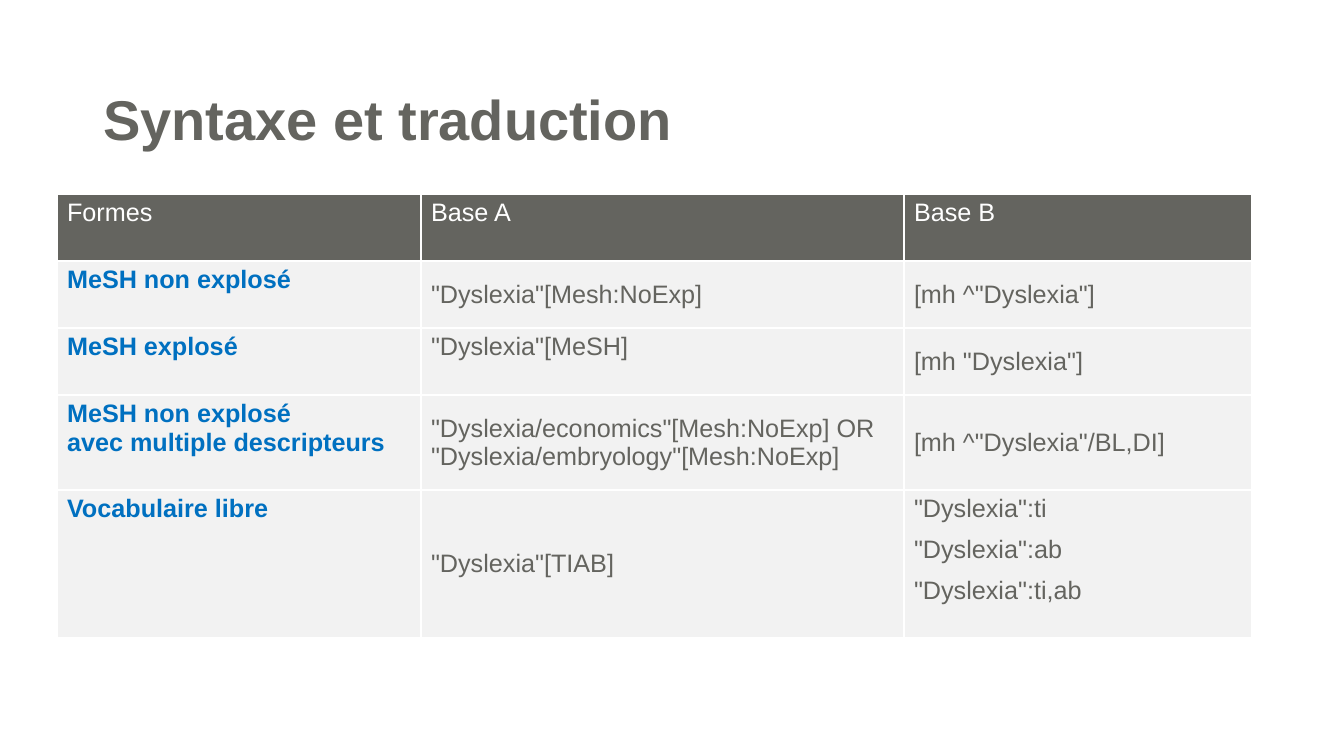
from lxml.etree import SubElement
from pptx import Presentation
from pptx.dml.color import RGBColor
from pptx.enum.text import MSO_ANCHOR as Anchor, PP_ALIGN as Align
from pptx.oxml import parse_xml
from pptx.oxml.ns import nsdecls
from pptx.util import Emu, Pt

GREY, BLUE, PALE, WHITE = "64645F", "0070C0", "F2F2F2", "FFFFFF"


def px(n):
    return Emu(round(n * 914400 / 100.8))


def style(para, size, color, bold):
    font = para.font
    font.name, font.size, font.bold = "Arial", Pt(size), bold
    font.color.rgb = RGBColor.from_string(color)


deck = Presentation()
deck.slide_width, deck.slide_height = px(1344), px(756)
slide = deck.slides.add_slide(deck.slide_layouts[5])

# Title
title = slide.shapes.title
title.left, title.top, title.width, title.height = px(93), px(88), px(1159), px(69)
title.text_frame.text = "Syntaxe et traduction"
title.text_frame.vertical_anchor = Anchor.MIDDLE
head = title.text_frame.paragraphs[0]
head.alignment, head.line_spacing = Align.LEFT, 0.9
style(head, 40, GREY, True)

# Table content
rows = [
    ("Formes", "Base A", "Base B"),
    ("MeSH non explosé", '"Dyslexia"[Mesh:NoExp]', '[mh ^"Dyslexia"]'),
    ("MeSH explosé", '"Dyslexia"[MeSH]', '[mh "Dyslexia"]'),
    ("MeSH non explosé\navec multiple descripteurs",
     '"Dyslexia/economics"[Mesh:NoExp] OR "Dyslexia/embryology"[Mesh:NoExp]',
     '[mh ^"Dyslexia"/BL,DI]'),
    ("Vocabulaire libre", '"Dyslexia"[TIAB]',
     '"Dyslexia":ti\n"Dyslexia":ab\n"Dyslexia":ti,ab'),
]
wide = [364, 483, 348]
high = [67, 67, 67, 95, 148]
tops = [(2, 1), (4, 2)]  # body cells whose text starts at the top

# Table grid
frame = slide.shapes.add_table(len(rows), len(wide), px(57), px(194),
                               px(sum(wide)), px(sum(high)))
table = frame.table
table.horz_banding = False
for col, w in zip(table.columns, wide):
    col.width = px(w)
for row, h in zip(table.rows, high):
    row.height = px(h)

# Cells
for r, texts in enumerate(rows):
    for c, text in enumerate(texts):
        cell = table.cell(r, c)
        cell.text = text
        label = r > 0 and c == 0
        color = WHITE if r == 0 else BLUE if label else GREY
        for i, para in enumerate(cell.text_frame.paragraphs):
            style(para, 18, color, label)
            if i and not label:
                para.space_before = Pt(9)
        high_up = r == 0 or c == 0 or (r, c) in tops
        cell.vertical_anchor = Anchor.TOP if high_up else Anchor.MIDDLE
        cell.fill.solid()
        cell.fill.fore_color.rgb = RGBColor.from_string(PALE if r else GREY)
        # White borders come before the fill
        props = cell._tc.get_or_add_tcPr()
        for i, side in enumerate("LRTB"):
            line = parse_xml(f'<a:ln{side} {nsdecls("a")} w="12700"><a:solidFill>'
                             f'<a:srgbClr val="{WHITE}"/></a:solidFill></a:ln{side}>')
            props.insert(i, line)

deck.save("out.pptx")
